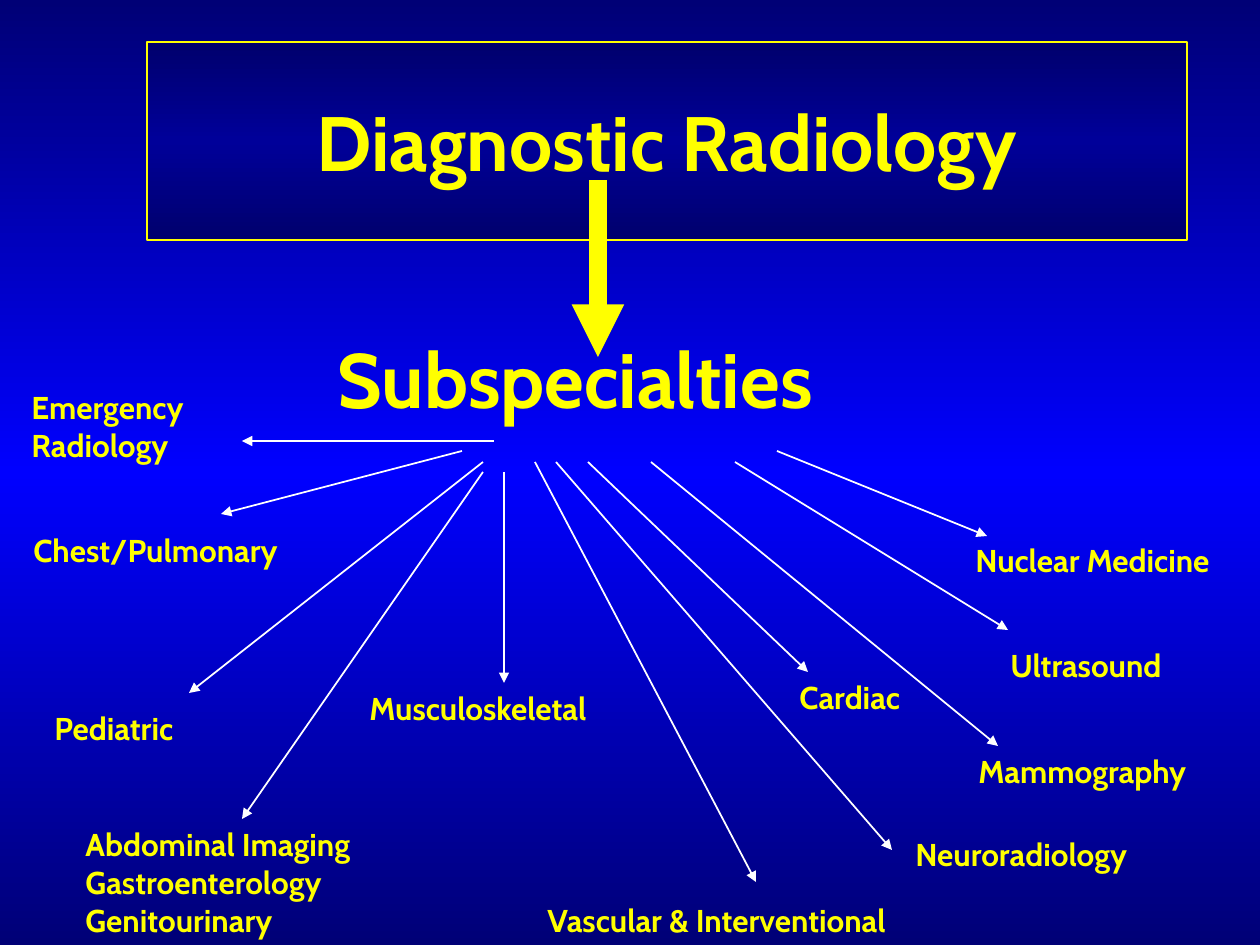
from copy import deepcopy

from pptx import Presentation
from pptx.dml.color import RGBColor
from pptx.enum.shapes import MSO_CONNECTOR
from pptx.enum.text import MSO_ANCHOR, MSO_AUTO_SIZE, PP_ALIGN
from pptx.oxml.ns import qn
from pptx.oxml.xmlchemy import OxmlElement
from pptx.util import Emu, Pt

EMU_PER_PX = 914400 / 126
FONT = "Cabin"
YELLOW = "FFFF00"
WHITE = "FFFFFF"

SPECIALTIES = [
    ("Emergency\nRadiology", (19, 4, 200, 88), (494, 63), (242, 63)),
    ("Chest/Pulmonary", (21, 147, 304, 50), (462, 73), (221, 136)),
    ("Pediatric", (42, 325, 166, 50), (483, 84), (189, 315)),
    ("Abdominal Imaging\nGastroenterology\nGenitourinary",
     (73, 441, 336, 126), (483, 94), (242, 441)),
    ("Musculoskeletal", (357, 305, 280, 50), (504, 94), (504, 305)),
    ("Vascular & Interventional", (535, 517, 432, 50), (535, 84), (756, 504)),
    ("Neuroradiology", (903, 451, 270, 50), (556, 84), (892, 472)),
    ("Cardiac", (787, 294, 144, 50), (588, 84), (808, 294)),
    ("Mammography", (966, 368, 262, 50), (651, 84), (998, 368)),
    ("Ultrasound", (998, 262, 199, 50), (735, 84), (1008, 252)),
    ("Nuclear Medicine", (963, 157, 297, 50), (777, 73), (987, 158)),
]


def px(length):
    """Turn pixels into EMU."""
    return Emu(round(length * EMU_PER_PX))


def color(hex_value):
    """Turn a hex string into a colour."""
    return RGBColor.from_string(hex_value)


def set_gradient(fill, element, edge, middle):
    """Fill top to bottom with a colour that changes at the middle and back."""
    fill.gradient()
    fill.gradient_angle = 270
    stop_list = element.find(".//" + qn("a:gsLst"))
    stop_list.insert(1, deepcopy(stop_list[0]))
    for stop, position, shade in zip(fill.gradient_stops, (0, 0.5, 1), (edge, middle, edge)):
        stop.position = position
        stop.color.rgb = color(shade)


def style_text(frame, text, size, alignment):
    """Write bold yellow paragraphs into a text frame."""
    frame.text = text
    for para in frame.paragraphs:
        para.alignment = alignment
        para.font.name = FONT
        para.font.size = Pt(size)
        para.font.bold = True
        para.font.color.rgb = color(YELLOW)


def add_label(page, box, text, size):
    """Add an unwrapped text label."""
    label = page.shapes.add_textbox(*map(px, box))
    label.text_frame.word_wrap = False
    label.text_frame.auto_size = MSO_AUTO_SIZE.SHAPE_TO_FIT_TEXT
    style_text(label.text_frame, text, size, PP_ALIGN.LEFT)


def add_arrow(page, start, end, shade, width, cap="flat"):
    """Add a straight arrow without a shadow."""
    arrow = page.shapes.add_connector(MSO_CONNECTOR.STRAIGHT, *map(px, start + end))
    arrow.line.color.rgb = color(shade)
    arrow.line.width = Pt(width)
    outline = arrow.line._get_or_add_ln()
    outline.set("cap", cap)
    head = OxmlElement("a:tailEnd")
    head.set("type", "triangle")
    outline.append(head)
    arrow.element.spPr.append(OxmlElement("a:effectLst"))


def add_header(page, box):
    """Place the title panel, its thick arrow and the heading below."""
    left, top, width, height = box
    title = page.shapes.title
    title.left, title.top, title.width, title.height = map(px, box)
    set_gradient(title.fill, title.element, "00006D", "000099")
    title.line.color.rgb = color(YELLOW)
    title.line.width = Pt(0.75)
    title.text_frame.auto_size = MSO_AUTO_SIZE.NONE
    title.text_frame.vertical_anchor = MSO_ANCHOR.MIDDLE
    style_text(title.text_frame, "Diagnostic Radiology", 44, PP_ALIGN.CENTER)
    add_arrow(page, (left + 451, top + 147), (left + 451, top + 315), YELLOW, 10, "sq")
    add_label(page, (left + 178, top + 283, 580, 105), "Subspecialties", 44)


def add_fan(page, box):
    """Place the specialties and the arrows that fan out to them."""
    left, top = box[:2]
    for text, (x, y, width, height), start, end in SPECIALTIES:
        add_label(page, (left + x, top + y, width, height), text, 18)
        add_arrow(page, (left + start[0], top + start[1]),
                  (left + end[0], top + end[1]), WHITE, 1)


def main():
    """Build the deck and save it."""
    deck = Presentation()
    deck.slide_width, deck.slide_height = px(1260), px(945)
    page = deck.slides.add_slide(deck.slide_layouts[5])
    set_gradient(page.background.fill, page.element, "000076", "0000FF")
    add_header(page, (147, 42, 1040, 198))
    add_fan(page, (0, 378, 1260, 567))
    deck.save("out.pptx")


if __name__ == "__main__":
    main()
